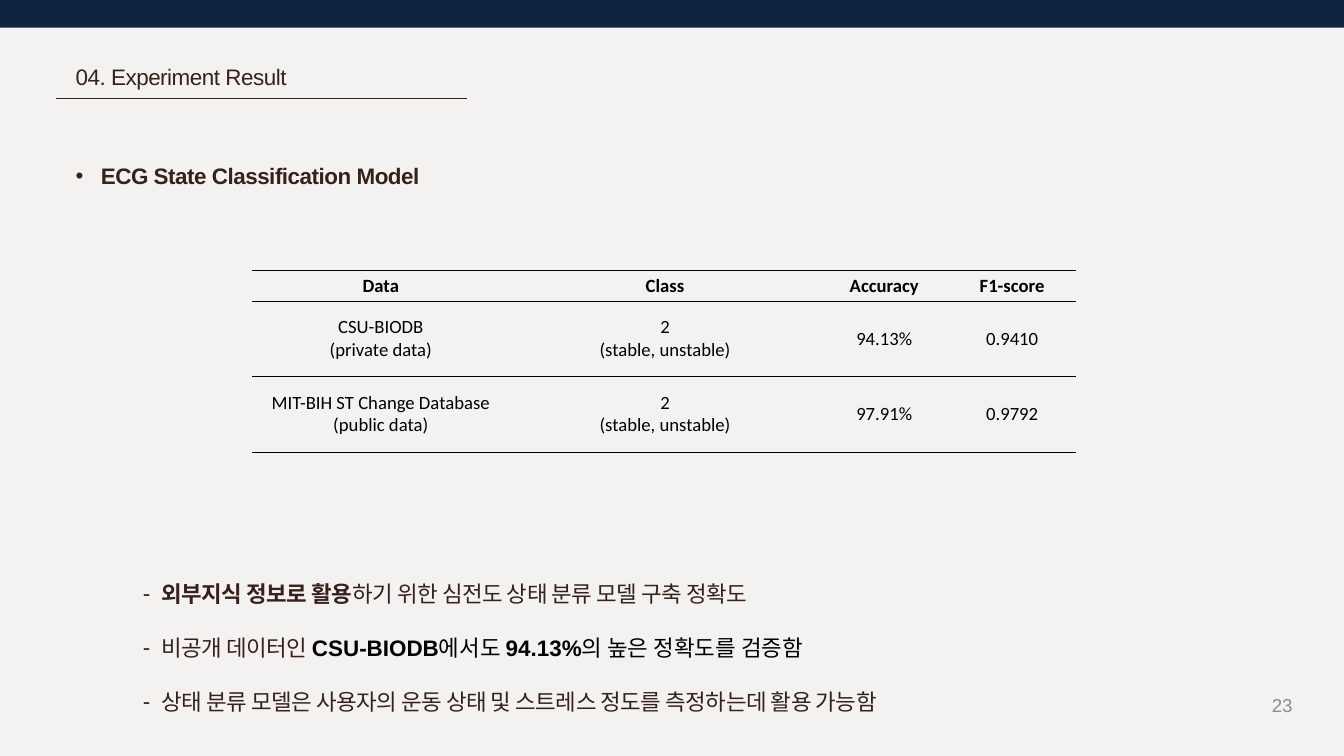
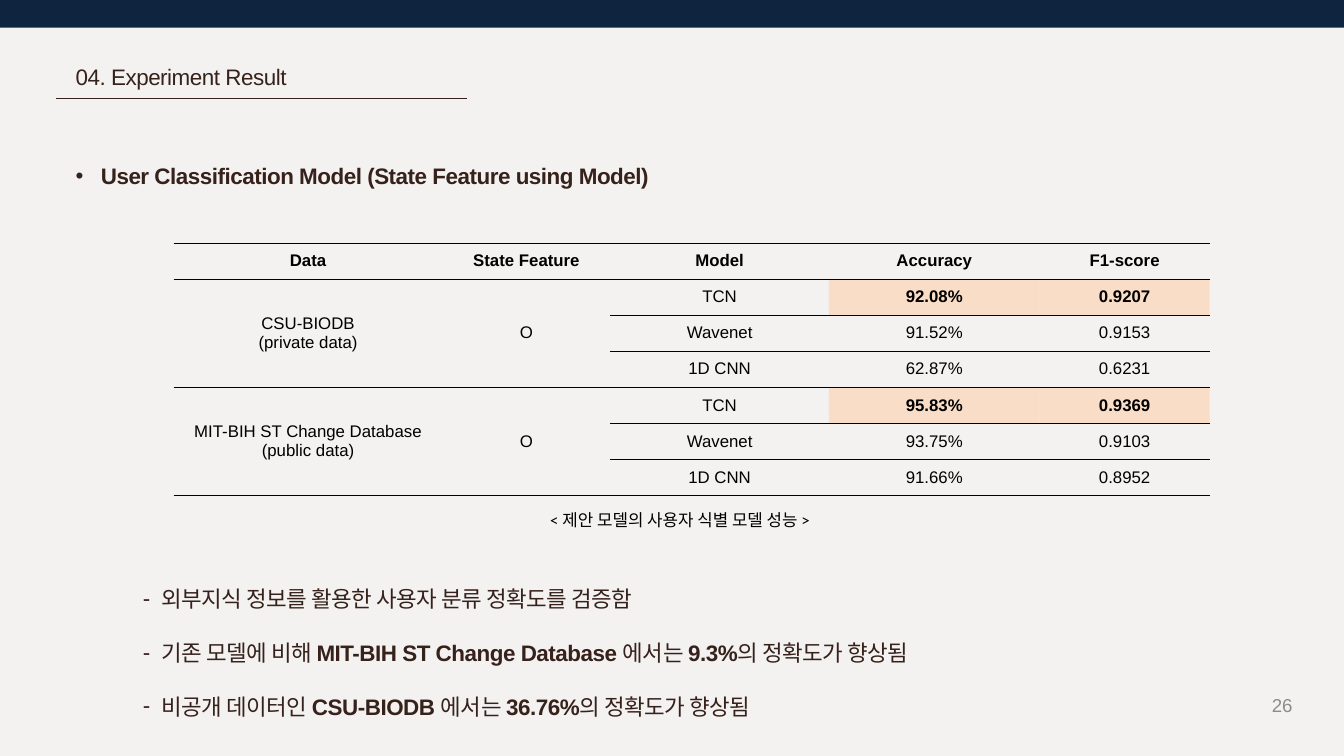
from lxml.etree import SubElement
from pptx import Presentation
from pptx.dml.color import RGBColor
from pptx.enum.shapes import MSO_CONNECTOR as CONN, MSO_SHAPE as SHAPE
from pptx.enum.text import MSO_ANCHOR as ANCHOR, MSO_AUTO_SIZE as AUTO, PP_ALIGN as ALIGN
from pptx.oxml.ns import qn
from pptx.util import Pt

NAVY = RGBColor(0x0F, 0x24, 0x3E)
BROWN = RGBColor(0x36, 0x21, 0x1B)
BLACK = RGBColor(0, 0, 0)
GRAY = RGBColor(0x8C, 0x8C, 0x8C)
PAPER = RGBColor(0xF3, 0xF2, 0xF1)
PEACH = RGBColor(0xFC, 0xD5, 0xB5)

WIDTH, HEIGHT = 1440, 810
NO_STYLE = "{2D5ABB26-0587-4C30-8999-92F81FD0307C}"
SECTION = "04. Experiment Result"
PRIVATE = "CSU-BIODB\n(private data)"
PUBLIC = "MIT-BIH ST Change Database\n(public data)"
CLASSES = "2\n(stable, unstable)"

# A run is (text, bold) or (text, bold, colour).
# Table rules are {row edge: (width, first column)}.
SLIDES = [
    dict(
        number="23",
        heading="ECG State Classification Model",
        notes_gap=391,
        notes=[
            [("외부지식 정보로 활용", True),
             ("하기 위한 심전도 상태 분류 모델 구축 정확도", False)],
            [("비공개 데이터인 ", False), ("CSU-BIODB", True, BLACK),
             ("에서도 ", False, BLACK), ("94.13%", True, BLACK),
             ("의 높은 정확도를 검증함", False, BLACK)],
            [("상태 분류 모델은 사용자의 운동 상태 및 스트레스 정도를 측정하는데 활용 가능함", False)],
        ],
        table=dict(
            at=(270, 290), cols=[276, 333, 137, 137], heights=[33, 80, 81.5],
            font="Calibri", size=20,
            rows=[
                ["Data", "Class", "Accuracy", "F1-score"],
                [PRIVATE, CLASSES, "94.13%", "0.9410"],
                [PUBLIC, CLASSES, "97.91%", "0.9792"],
            ],
            rules={0: (1.5, 0), 1: (1.5, 0), 2: (1, 0), 3: (1.5, 0)},
        ),
    ),
    dict(
        number="26",
        heading="User Classification Model (State Feature using Model)",
        notes_gap=396,
        notes=[
            [("외부지식 정보를 활용한 사용자 분류 정확도를 검증함", False)],
            [("기존 모델에 비해 ", False), ("MIT-BIH ST Change Database ", True),
             ("에서는 ", False), ("9.3%", True), ("의 정확도가 향상됨", False)],
            [("비공개 데이터인 ", False), ("CSU-BIODB ", True),
             ("에서는 ", False), ("36.76%", True), ("의 정확도가 향상됨", False)],
        ],
        table=dict(
            at=(186, 260.5), cols=[288, 180, 234, 226, 182], heights=[38.6] * 7,
            font="Arial", size=18,
            rows=[
                ["Data", "State Feature", "Model", "Accuracy", "F1-score"],
                [PRIVATE, "O", "TCN", "92.08%", "0.9207"],
                [None, None, "Wavenet", "91.52%", "0.9153"],
                [None, None, "1D CNN", "62.87%", "0.6231"],
                [PUBLIC, "O", "TCN", "95.83%", "0.9369"],
                [None, None, "Wavenet", "93.75%", "0.9103"],
                [None, None, "1D CNN", "91.66%", "0.8952"],
            ],
            rules={0: (1.5, 0), 1: (1.5, 0), 2: (1, 2), 4: (1, 0), 5: (1, 2), 7: (1.5, 0)},
            spans=[(1, 0), (1, 1), (4, 0), (4, 1)], span_rows=3,
            best_rows=(1, 4), best_from=3,
        ),
        caption="< 제안 모델의 사용자 식별 모델 성능 >",
    ),
]


def place(sp, x, y, w, h):
    sp.left, sp.top, sp.width, sp.height = Pt(x), Pt(y), Pt(w), Pt(h)


def add_text(p, text, size=24, font="Arial", color=BROWN, bold=False, spacing=None, align=None):
    r = p.add_run()
    r.text = text
    f = r.font
    f.size, f.name, f.bold, f.color.rgb = Pt(size), font, bold, color
    if spacing is not None:
        r._r.get_or_add_rPr().set("spc", str(int(spacing * 100)))
    if align is not None:
        p.alignment = align


def set_bullet(p, char, left, hang):
    pPr = p._p.get_or_add_pPr()
    pPr.set("marL", str(Pt(left)))
    pPr.set("indent", str(-Pt(hang)))
    SubElement(pPr, qn("a:buFont")).set("typeface", "Arial")
    SubElement(pPr, qn("a:buChar")).set("char", char)


def open_frame(sp):
    """Strip the margins and fitting of a placeholder and return its text frame."""
    tf = sp.text_frame
    tf.auto_size, tf.vertical_anchor, tf.word_wrap = AUTO.NONE, ANCHOR.TOP, True
    tf.margin_left = tf.margin_right = tf.margin_top = tf.margin_bottom = 0
    return tf


def add_frame(slide, number):
    band = slide.shapes.add_shape(SHAPE.RECTANGLE, 0, 0, Pt(WIDTH), Pt(29.5))
    band.shadow.inherit = False
    band.fill.solid()
    band.fill.fore_color.rgb = NAVY
    band.line.fill.background()

    rule = slide.shapes.add_connector(CONN.STRAIGHT, Pt(60), Pt(105), Pt(500), Pt(105))
    rule.line.color.rgb, rule.line.width = BROWN, Pt(0.75)
    SubElement(rule._element.spPr, qn("a:effectLst"))

    title = slide.shapes.title
    place(title, 81, 62.6, 260, 31)
    p = open_frame(title).paragraphs[0]
    p.line_spacing = Pt(33.6)
    add_text(p, SECTION, spacing=-0.5, align=ALIGN.LEFT)

    tf = slide.shapes.add_textbox(Pt(1224), Pt(741), Pt(168), Pt(29)).text_frame
    tf.word_wrap, tf.vertical_anchor = True, ANCHOR.MIDDLE
    add_text(tf.paragraphs[0], number, size=20, color=GRAY, align=ALIGN.RIGHT)


def add_body(slide, heading, notes, notes_gap):
    body = slide.placeholders[1]
    place(body, 81, 159, 1275, 606)
    tf = open_frame(body)
    p = tf.paragraphs[0]
    p.line_spacing, p.space_before = 1.5, Pt(0)
    set_bullet(p, "•", 27, 27)
    add_text(p, heading, bold=True, spacing=-0.5)
    for i, runs in enumerate(notes):
        p = tf.add_paragraph()
        p.line_spacing, p.space_before = 2.0, Pt(0 if i else notes_gap)
        set_bullet(p, "-", 92, 20)
        for text, bold, *color in runs:
            add_text(p, text, bold=bold, color=color[0] if color else BROWN,
                     spacing=0 if color else -0.5)


def add_border(cell, side, width):
    ln = SubElement(cell._tc.get_or_add_tcPr(), qn(f"a:{side}"), w=str(Pt(width)))
    fill = SubElement(ln, qn("a:solidFill"))
    SubElement(fill, qn("a:srgbClr"), val=str(BLACK))


def add_results(slide, at, cols, heights, font, size, rows, rules,
                spans=(), span_rows=1, best_rows=(), best_from=0):
    x, y = at
    frame = slide.shapes.add_table(len(rows), len(cols), Pt(x), Pt(y),
                                   Pt(sum(cols)), Pt(sum(heights)))
    table = frame.table
    table.first_row = table.horz_banding = False
    table._tbl.tblPr.find(qn("a:tableStyleId")).text = NO_STYLE
    for column, w in zip(table.columns, cols):
        column.width = Pt(w)
    for row, h in zip(table.rows, heights):
        row.height = Pt(h)
    for r, c in spans:
        table.cell(r, c).merge(table.cell(r + span_rows - 1, c))

    for r, row in enumerate(rows):
        for c, text in enumerate(row):
            cell = table.cell(r, c)
            bottom = r + (cell.span_height if cell.is_merge_origin else 1)
            for side, edge in (("lnT", r), ("lnB", bottom)):
                width, first = rules.get(edge, (0, 0))
                if width and c >= first:
                    add_border(cell, side, width)
            best = r in best_rows and c >= best_from
            cell.fill.solid()
            cell.fill.fore_color.rgb = PEACH if best else PAPER
            if best:
                color = cell._tc.tcPr.find(qn("a:solidFill"))[0]
                SubElement(color, qn("a:alpha"), val="70000")
            cell.vertical_anchor = ANCHOR.MIDDLE
            if text is None:
                continue
            tf = cell.text_frame
            for i, line in enumerate(text.split("\n")):
                p = tf.add_paragraph() if i else tf.paragraphs[0]
                add_text(p, line, size=size, font=font, color=BLACK,
                         bold=r == 0 or best, align=ALIGN.CENTER)


def add_caption(slide, text):
    tf = slide.shapes.add_textbox(Pt(582.5), Pt(543), Pt(316), Pt(29)).text_frame
    tf.word_wrap = False
    add_text(tf.paragraphs[0], text, size=18, font="Calibri", color=BLACK)


def main():
    prs = Presentation()
    prs.slide_width, prs.slide_height = Pt(WIDTH), Pt(HEIGHT)
    background = prs.slide_master.background.fill
    background.solid()
    background.fore_color.rgb = PAPER
    for data in SLIDES:
        slide = prs.slides.add_slide(prs.slide_layouts[1])
        add_frame(slide, data["number"])
        add_body(slide, data["heading"], data["notes"], data["notes_gap"])
        add_results(slide, **data["table"])
        if "caption" in data:
            add_caption(slide, data["caption"])
    prs.save("out.pptx")


if __name__ == "__main__":
    main()
